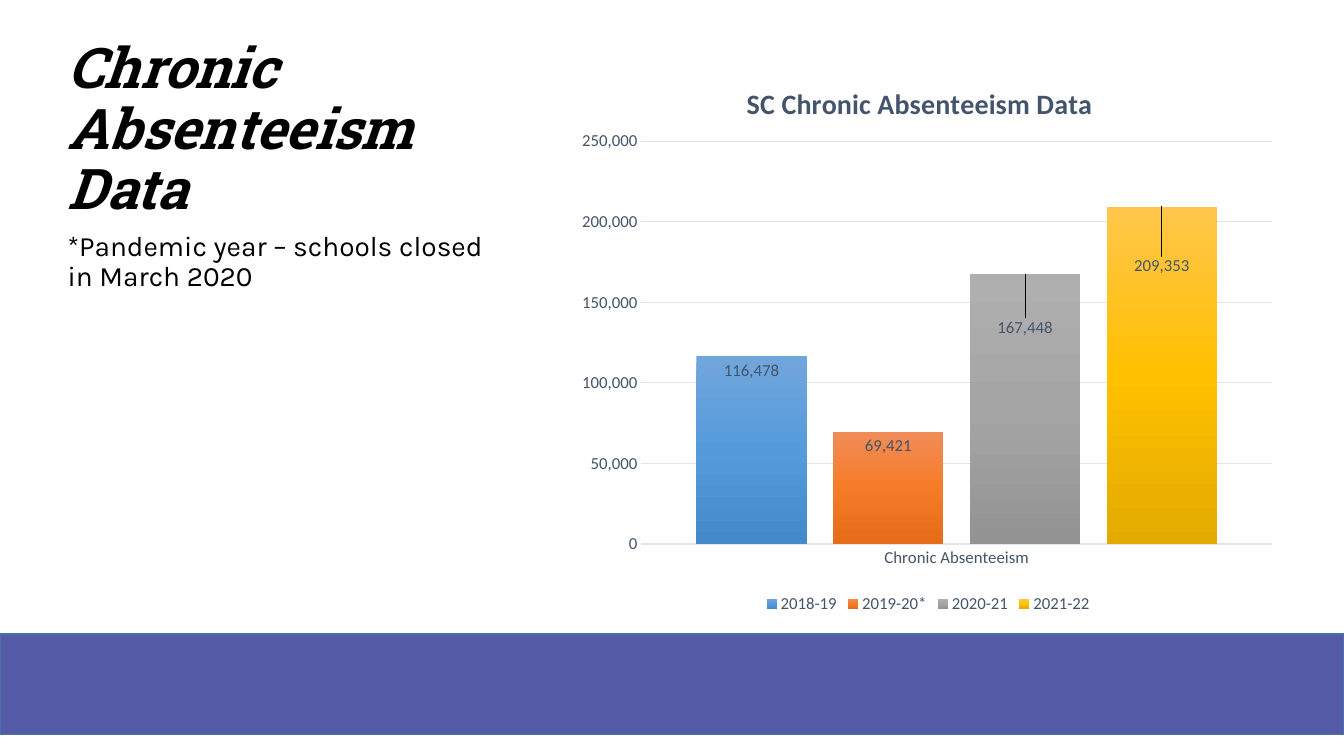
from copy import deepcopy
from dataclasses import dataclass

from lxml.etree import SubElement
from pptx import Presentation
from pptx.chart.data import CategoryChartData
from pptx.dml.color import RGBColor
from pptx.enum.chart import XL_CHART_TYPE, XL_LABEL_POSITION, XL_LEGEND_POSITION, XL_TICK_MARK
from pptx.enum.shapes import MSO_SHAPE
from pptx.enum.text import MSO_ANCHOR, MSO_AUTO_SIZE, PP_ALIGN
from pptx.oxml.ns import qn
from pptx.util import Inches, Pt

HEADING = "Chronic Absenteeism Data"
FOOTNOTE = "*Pandemic year – schools closed in March 2020"
CHART_TITLE = "SC Chronic Absenteeism Data"
CATEGORY = "Chronic Absenteeism"
YEARS = [
    {"year": "2018-19", "students": 116478, "shades": ("71A6DB", "559BDB", "448ACA"), "label_drop": 0},
    {"year": "2019-20*", "students": 69421, "shades": ("F18C57", "F67B28", "E56C19"), "label_drop": 0},
    {"year": "2020-21", "students": 167448, "shades": ("AFAFAF", "A5A5A5", "939393"), "label_drop": 0.07},
    {"year": "2021-22", "students": 209353, "shades": ("FFC64B", "FFC000", "E3AB00"), "label_drop": 0.08},
]


@dataclass(frozen=True)
class Theme:
    ink: str = "000000"
    slate: str = "44546A"
    grid: str = "E0E5EB"
    band: str = "565BA7"
    band_edge: str = "43739E"
    heading_face: str = "Roboto Slab"
    body_face: str = "Karla"
    chart_face: str = "Calibri"
    heading_size: int = 40
    body_size: int = 20
    chart_title_size: int = 20
    chart_size: int = 12


THEME = Theme()
WIDTH, HEIGHT = 13.33, 7.5
LEFT, TOP, TEXT_WIDTH = 0.57, 0.5, 4.5
HEADING_HEIGHT, CONTENT_HEIGHT = 1.75, 5.63
CHART_LEFT, CHART_WIDTH = 5.65, 7.11
BAND_TOP, BAND_HEIGHT = 6.29, 1


def rgb(value):
    return RGBColor.from_string(value)


def set_font(font, face=THEME.chart_face, size=THEME.chart_size, color=THEME.slate, bold=False, italic=False):
    font.name, font.size, font.bold, font.italic = face, Pt(size), bold, italic
    font.color.rgb = rgb(color)


def write(frame, text, spacing=None, **style):
    frame.text = text
    paragraph = frame.paragraphs[0]
    paragraph.space_before = Pt(0)
    paragraph.line_spacing = spacing
    set_font(paragraph.runs[0].font, **style)
    return paragraph


def fill_placeholder(holder, text, top, height, anchor, **style):
    holder.left, holder.top = Inches(LEFT), Inches(top)
    holder.width, holder.height = Inches(TEXT_WIDTH), Inches(height)
    frame = holder.text_frame
    frame.word_wrap, frame.auto_size = True, MSO_AUTO_SIZE.NONE
    frame.vertical_anchor = anchor
    write(frame, text, spacing=0.9, color=THEME.ink, **style).alignment = PP_ALIGN.LEFT


def place(element, position, **shares):
    for old in element.findall(qn("c:layout")):
        element.remove(old)
    layout = SubElement(element, qn("c:layout"))
    manual = SubElement(layout, qn("c:manualLayout"))
    for tag, value in shares.items():
        SubElement(manual, qn(f"c:{tag}")).set("val", str(value))
    element.insert(position, layout)


def shade(series, colors):
    fill = series.format.fill
    fill.gradient()
    fill.gradient_angle = 270
    stops = series._element.find(".//" + qn("a:gsLst"))
    stops.append(deepcopy(stops[-1]))
    for index, (stop, color) in enumerate(zip(fill.gradient_stops, colors)):
        stop.position = index / (len(colors) - 1)
        stop.color.rgb = rgb(color)


def label(series, drop):
    labels = series.data_labels
    labels.show_value = True
    labels.number_format, labels.number_format_is_linked = "#,##0", False
    labels.position = XL_LABEL_POSITION.INSIDE_END
    set_font(labels.font)
    if drop:
        point_label = series.points[0].data_label
        set_font(point_label.font)
        point_label.position = XL_LABEL_POSITION.INSIDE_END
        place(series._element.find(".//" + qn("c:dLbl")), 1, x=0, y=drop)


def style_axis(axis):
    axis.major_tick_mark = axis.minor_tick_mark = XL_TICK_MARK.NONE
    set_font(axis.tick_labels.font)


def grid_line(line):
    line.color.rgb, line.width = rgb(THEME.grid), Pt(0.75)


def add_absence_chart(slide):
    data = CategoryChartData(number_format="#,##0")
    data.categories = [CATEGORY]
    for entry in YEARS:
        data.add_series(entry["year"], [entry["students"]])
    chart = slide.shapes.add_chart(
        XL_CHART_TYPE.COLUMN_CLUSTERED, Inches(CHART_LEFT), Inches(TOP),
        Inches(CHART_WIDTH), Inches(CONTENT_HEIGHT), data).chart
    set_font(chart.font)

    chart.has_title = True
    write(chart.chart_title.text_frame, CHART_TITLE, size=THEME.chart_title_size, bold=True)
    place(chart.chart_title._element, 1, xMode="edge", yMode="edge", x=0.24, y=0.05)

    chart.has_legend = True
    chart.legend.position = XL_LEGEND_POSITION.BOTTOM
    chart.legend.include_in_layout = False
    set_font(chart.legend.font)

    style_axis(chart.category_axis)
    grid_line(chart.category_axis.format.line)
    values = chart.value_axis
    style_axis(values)
    values.minimum_scale, values.maximum_scale, values.major_unit = 0, 250000, 50000
    values.tick_labels.number_format = "#,##0"
    values.tick_labels.number_format_is_linked = False
    values.format.line.fill.background()
    grid_line(values.major_gridlines.format.line)

    plot = chart.plots[0]
    plot.gap_width, plot.overlap, plot.vary_by_categories = 100, -24, False
    for series, entry in zip(plot.series, YEARS):
        shade(series, entry["shades"])
        label(series, entry["label_drop"])
    place(chart._chartSpace.find(".//" + qn("c:plotArea")), 0, layoutTarget="inner",
          xMode="edge", yMode="edge", x=0.1, y=0.16, w=0.88, h=0.71)


def add_band(slide):
    band = slide.shapes.add_shape(
        MSO_SHAPE.RECTANGLE, 0, Inches(BAND_TOP), Inches(WIDTH), Inches(BAND_HEIGHT))
    band.shadow.inherit = False
    band.fill.solid()
    band.fill.fore_color.rgb = rgb(THEME.band)
    band.line.color.rgb, band.line.width = rgb(THEME.band_edge), Pt(1)


def main():
    deck = Presentation()
    deck.slide_width, deck.slide_height = Inches(WIDTH), Inches(HEIGHT)
    slide = deck.slides.add_slide(deck.slide_layouts.get_by_name("Content with Caption"))
    holders = {holder.placeholder_format.idx: holder for holder in slide.placeholders}
    unused = holders[1]._element
    unused.getparent().remove(unused)

    add_band(slide)
    fill_placeholder(slide.shapes.title, HEADING, TOP, HEADING_HEIGHT, MSO_ANCHOR.BOTTOM,
                     face=THEME.heading_face, size=THEME.heading_size, bold=True, italic=True)
    fill_placeholder(holders[2], FOOTNOTE, TOP + HEADING_HEIGHT, CONTENT_HEIGHT - HEADING_HEIGHT,
                     MSO_ANCHOR.TOP, face=THEME.body_face, size=THEME.body_size)
    add_absence_chart(slide)
    deck.save("out.pptx")


if __name__ == "__main__":
    main()
